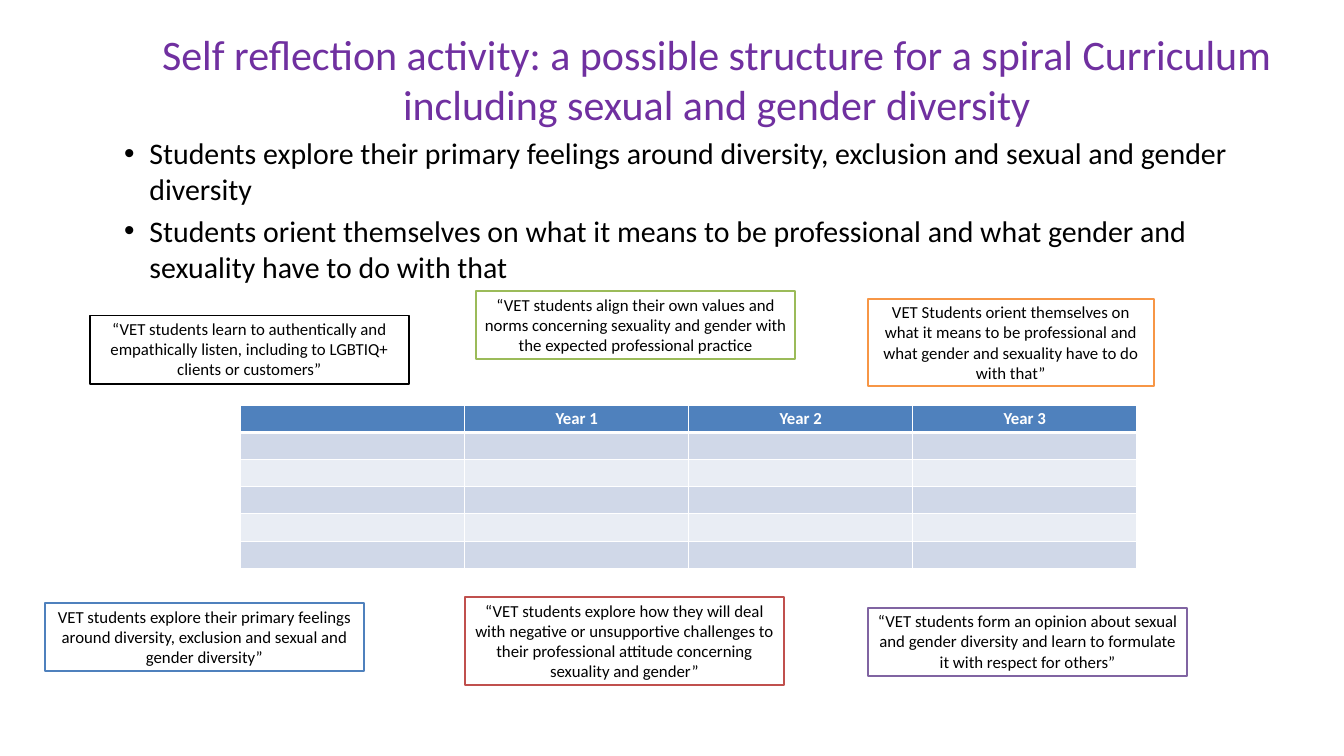
from lxml import etree
from pptx import Presentation
from pptx.dml.color import RGBColor
from pptx.enum.shapes import MSO_SHAPE
from pptx.enum.text import MSO_ANCHOR, MSO_AUTO_SIZE, PP_ALIGN
from pptx.oxml.ns import qn
from pptx.util import Pt

RECTANGLE = MSO_SHAPE.RECTANGLE
MIDDLE = MSO_ANCHOR.MIDDLE
TOP = MSO_ANCHOR.TOP
GROW = MSO_AUTO_SIZE.SHAPE_TO_FIT_TEXT
CENTER = PP_ALIGN.CENTER

COLOURS = {
    "title": "7030A0",
    "black": "000000",
    "white": "FFFFFF",
    "blue": "4F81BD",
    "band": "D0D8E8",
    "pale": "E9EDF4",
    "orange": "F79646",
    "purple": "8064A2",
    "red": "C0504D",
    "green": "9BBB59",
}


def colour(name):
    return RGBColor.from_string(COLOURS[name])


def write(para, text, size, name, bold=False):
    para.text = text
    for span in para.runs:
        span.font.name = "Calibri"
        span.font.size = Pt(size)
        span.font.bold = bold
        span.font.color.rgb = colour(name)


deck = Presentation()
deck.slide_width = Pt(1440)
deck.slide_height = Pt(810)
page = deck.slides.add_slide(deck.slide_layouts[6])

title = page.shapes.add_textbox(Pt(156), Pt(27.5), Pt(1224), Pt(113.5))
title.text_frame.word_wrap = True
title.text_frame.vertical_anchor = MIDDLE
para = title.text_frame.paragraphs[0]
write(para, "Self reflection activity: a possible structure for a spiral Curriculum "
      "including sexual and gender diversity", 45, "title")
para.alignment = CENTER

body = page.shapes.add_textbox(Pt(126), Pt(141), Pt(1224), Pt(546))
body.text_frame.word_wrap = True
goals = [
    "Students explore their primary feelings around diversity, exclusion and sexual and gender diversity",
    "Students orient themselves on what it means to be professional and what gender and sexuality have to do with that",
]
for index, goal in enumerate(goals):
    para = body.text_frame.paragraphs[0] if index == 0 else body.text_frame.add_paragraph()
    properties = para._p.get_or_add_pPr()
    properties.set("marL", str(Pt(27)))
    properties.set("indent", str(-Pt(27)))
    etree.SubElement(properties, qn("a:buFont"), typeface="Arial")
    etree.SubElement(properties, qn("a:buChar"), char="•")
    write(para, goal, 32, "black")
    if index:
        para.space_before = Pt(6.4)

headings = ["", "Year 1", "Year 2", "Year 3"]
row_count = 6
table = page.shapes.add_table(row_count, len(headings), Pt(258), Pt(434), Pt(960), Pt(175)).table
for row_index in range(row_count):
    for column_index, heading in enumerate(headings):
        cell = table.cell(row_index, column_index)
        widths = {
            "lnL": 1,
            "lnR": 1,
            "lnT": 3 if row_index == 1 else 1,
            "lnB": 3 if row_index == 0 else 1,
        }
        cell_properties = cell._tc.get_or_add_tcPr()
        for side, width in widths.items():
            border = etree.SubElement(cell_properties, qn(f"a:{side}"), w=str(Pt(width)))
            paint = etree.SubElement(border, qn("a:solidFill"))
            etree.SubElement(paint, qn("a:srgbClr"), val=COLOURS["white"])
        cell.fill.solid()
        if row_index == 0:
            cell.fill.fore_color.rgb = colour("blue")
            if heading:
                para = cell.text_frame.paragraphs[0]
                write(para, heading, 18, "white", bold=True)
                para.alignment = CENTER
        else:
            cell.fill.fore_color.rgb = colour("band" if row_index % 2 else "pale")

statements = [
    (930, 320, 306, 94, "orange", "VET Students orient themselves on what it means to be professional "
     "and what gender and sexuality have to do with that”"),
    (48, 646, 342, 73, "blue", "VET students explore their primary feelings around diversity, "
     "exclusion and sexual and gender diversity”"),
    (930, 651, 342, 73, "purple", "“VET students form an opinion about sexual and gender diversity "
     "and learn to formulate it with respect for others”"),
    (96, 338, 342, 73, "black", "“VET students learn to authentically and empathically listen, "
     "including to LGBTIQ+ clients or customers”"),
    (498, 640, 342, 94, "red", "“VET students explore how they will deal with negative or unsupportive "
     "challenges to their professional attitude concerning sexuality and gender”"),
    (510, 312, 342, 73, "green", "“VET students align their own values and norms concerning sexuality "
     "and gender with the expected professional practice"),
]
for left, top, width, height, outline, statement in statements:
    box = page.shapes.add_shape(RECTANGLE, Pt(left), Pt(top), Pt(width), Pt(height))
    box.shadow.inherit = False
    box.fill.solid()
    box.fill.fore_color.rgb = colour("white")
    box.line.color.rgb = colour(outline)
    box.line.width = Pt(2)
    frame = box.text_frame
    frame.word_wrap = True
    frame.auto_size = GROW
    frame.vertical_anchor = TOP
    para = frame.paragraphs[0]
    write(para, statement, 18, "black")
    para.alignment = CENTER

deck.save("out.pptx")
